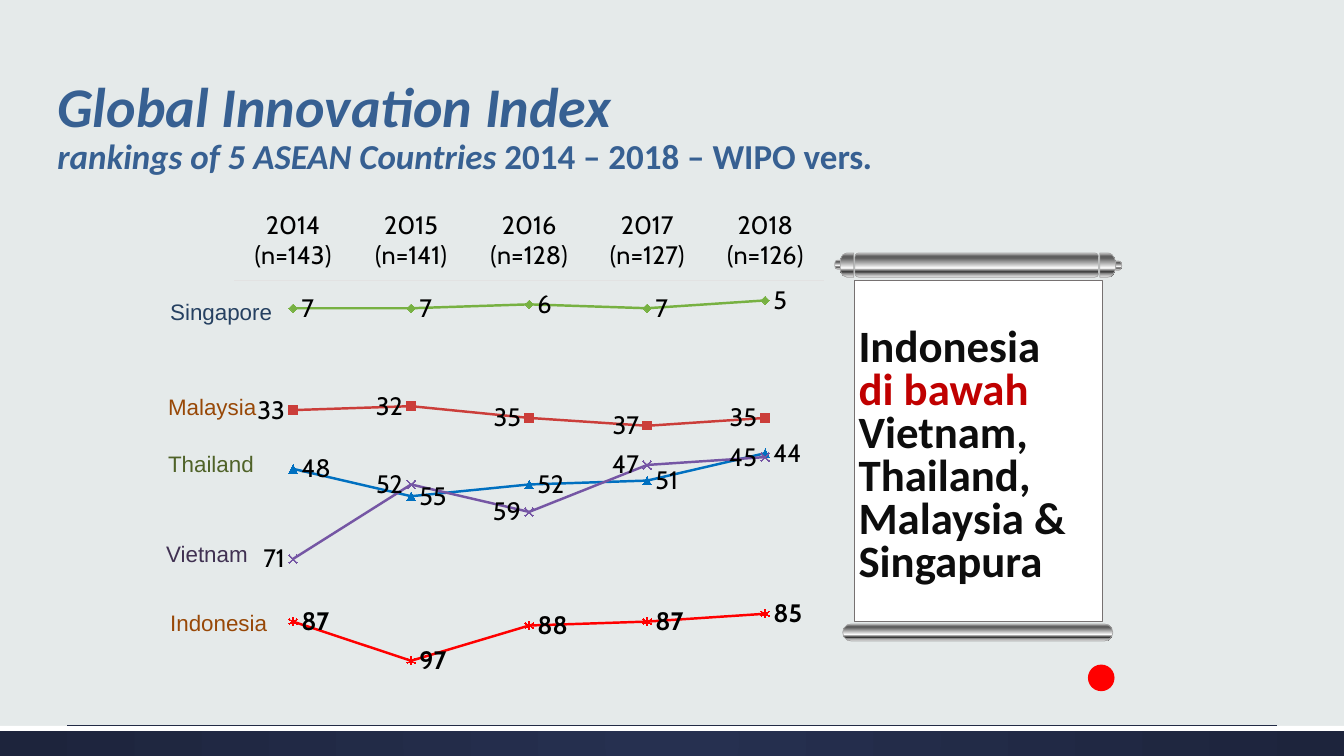
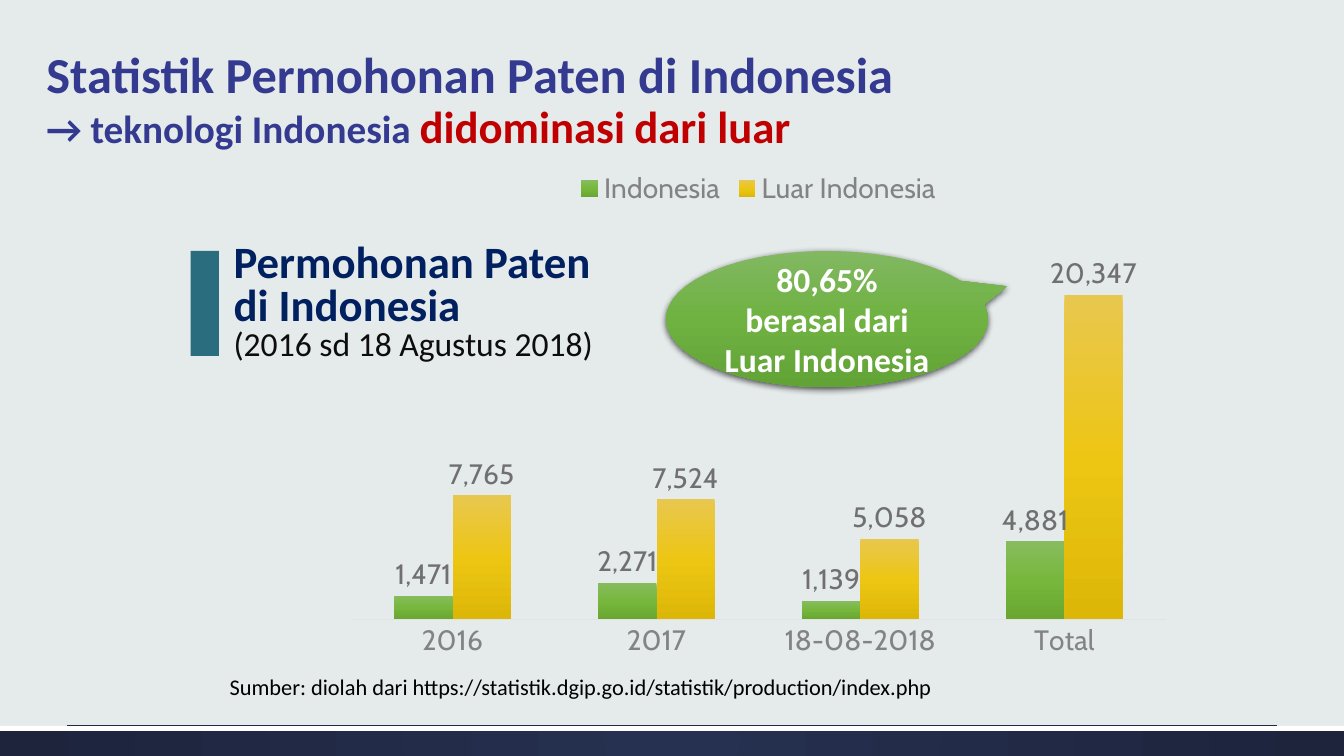
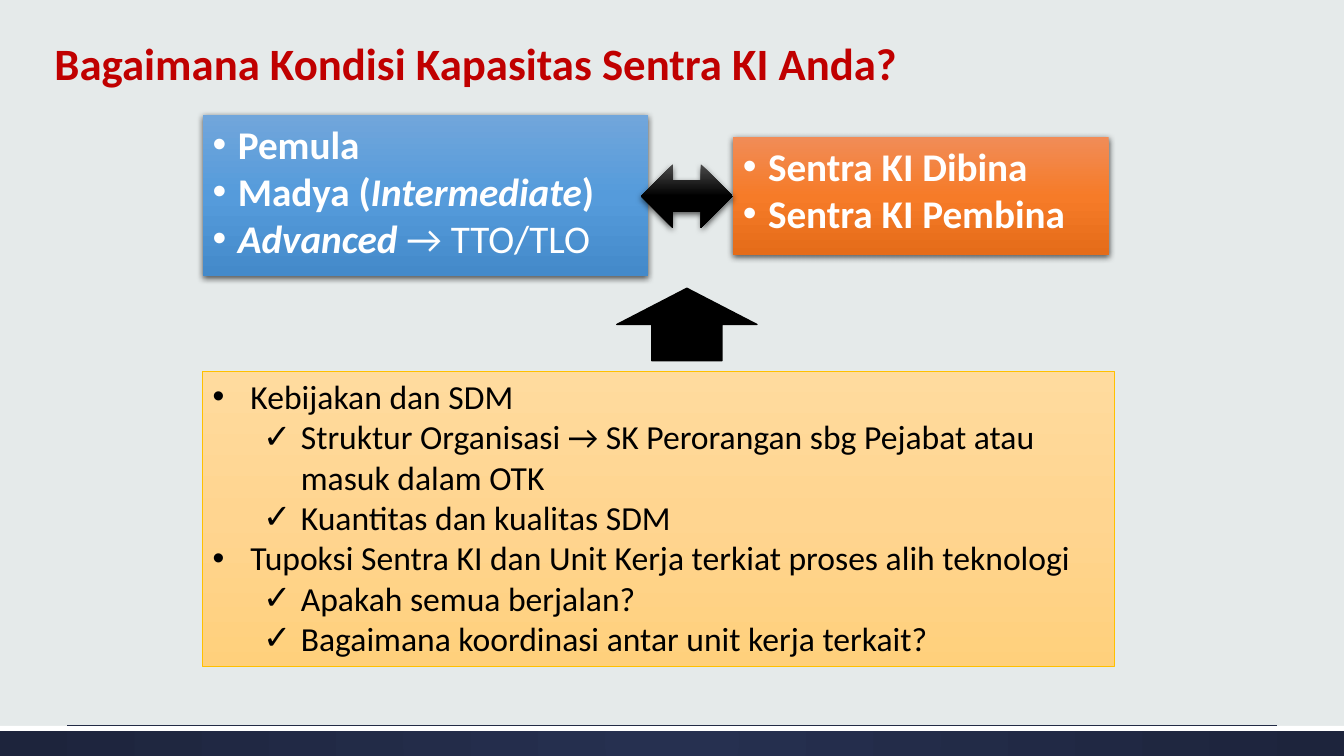
from dataclasses import dataclass
from typing import Optional, Union

from lxml.etree import SubElement
from pptx import Presentation
from pptx.chart.data import CategoryChartData
from pptx.dml.color import RGBColor
from pptx.enum.chart import XL_CHART_TYPE as CT, XL_LABEL_POSITION as LP, XL_LEGEND_POSITION
from pptx.enum.chart import XL_MARKER_STYLE as MK, XL_TICK_LABEL_POSITION, XL_TICK_MARK
from pptx.enum.shapes import MSO_CONNECTOR, MSO_SHAPE as SH
from pptx.enum.text import MSO_ANCHOR as ANCHOR, MSO_AUTO_SIZE, PP_ALIGN as ALIGN
from pptx.oxml import parse_xml
from pptx.oxml.ns import nsdecls, qn
from pptx.util import Pt

Box = tuple[float, float, float, float]
Run = tuple[str, dict]


@dataclass(frozen=True)
class Gradient:
    stops: tuple[tuple[int, str], ...]
    radial: bool = False


Fill = Union[str, Gradient]


def shade(top: str, middle: str, bottom: str) -> Gradient:
    return Gradient(((0, top), (50, middle), (100, bottom)))


@dataclass(frozen=True)
class Theme:
    text_font: str = "Calibri"
    chart_font: str = "Cabin"
    caption_font: str = "Arial"
    page: str = "E5EAEA"
    white: str = "FFFFFF"
    black: str = "000000"
    ink: str = "0D0D0D"
    red: str = "C00000"
    bright_red: str = "FF0000"
    title_blue: str = "376092"
    title_indigo: str = "333A90"
    navy: str = "002060"
    teal: str = "296D7F"
    rule: str = "222B45"
    axis: str = "E2E2E2"
    axis_text: str = "838383"
    label_text: str = "707070"
    paper_edge: str = "767171"
    metal_edge: str = "A6A6A6"
    gold_edge: str = "FFC000"
    band: Gradient = Gradient(((0, "263050"), (100, "1D243C")), radial=True)
    metal: Gradient = Gradient((
        (0, "CBCBCB"), (13, "5F5F5F"), (21, "5F5F5F"), (63, "FFFFFF"),
        (67, "B2B2B2"), (79, "292929"), (82, "777777"), (100, "EAEAEA")))
    green_bar: Gradient = shade("87BC5E", "77B73C", "69A731")
    yellow_bar: Gradient = shade("E8C74F", "EDC614", "DDB707")
    green: Gradient = shade("81B861", "6FB242", "62A336")
    blue: Gradient = shade("71A6DB", "559BDB", "448ACA")
    orange: Gradient = shade("F18C57", "F67B28", "E56C19")
    cream: Gradient = shade("FFDB9E", "FFD590", "FFD07C")
    coal: Gradient = shade("4B4B4B", "000000", "000000")
    hero: float = 40
    title: float = 36
    heading: float = 32
    lead: float = 28
    subtitle: float = 25
    body: float = 24
    chart_large: float = 20
    chart_small: float = 18
    small: float = 16


T = Theme()


@dataclass(frozen=True)
class Country:
    name: str
    ranks: tuple[int, ...]
    color: str
    marker: MK
    label_side: LP
    caption_color: str
    caption_box: Box
    hollow: bool = False
    bold: bool = False


COUNTRIES = (
    Country("Singapore", (7, 7, 6, 7, 5), "77B142", MK.DIAMOND, LP.RIGHT,
            "254061", (114.5, 209.5, 87.8, 26.6)),
    Country("Malaysia", (33, 32, 35, 37, 35), "CB3E3A", MK.SQUARE, LP.LEFT,
            "984807", (113, 277.2, 78.5, 26.6)),
    Country("Thailand", (48, 55, 52, 51, 44), "0070C0", MK.TRIANGLE, LP.RIGHT,
            "4F6228", (113, 318.2, 76.3, 26.6)),
    Country("Vietnam", (71, 52, 59, 47, 45), "7556A4", MK.X, LP.LEFT,
            "403152", (111.6, 382.3, 73.4, 26.6), hollow=True),
    Country("Indonesia", (87, 97, 88, 87, 85), "FF0000", MK.STAR, LP.RIGHT,
            "984807", (114.5, 431.3, 84.2, 26.6), hollow=True, bold=True),
)


@dataclass(frozen=True)
class RodPart:
    kind: SH
    box: Box
    flipped: bool = False


ROD_PARTS = (
    RodPart(SH.ROUNDED_RECTANGLE, (610.6, 180.7, 174.2, 17.3)),
    RodPart(SH.FLOWCHART_DELAY, (785.5, 180.7, 11.5, 17.3)),
    RodPart(SH.FLOWCHART_DELAY, (599.8, 180.7, 10.1, 17.3), True),
    RodPart(SH.FLOWCHART_DELAY, (797, 186.5, 4.3, 6.5)),
    RodPart(SH.FLOWCHART_DELAY, (596.2, 185.8, 4.3, 6.5), True),
    RodPart(SH.ROUNDED_RECTANGLE, (601.9, 445.7, 193, 12.2)),
)


@dataclass(frozen=True)
class Item:
    runs: tuple[Run, ...]
    mark: str = "•"
    level: int = 0


@dataclass(frozen=True)
class Panel:
    idx: int
    box: Box
    fill: Gradient
    items: tuple[Item, ...]
    fmt: dict
    hang: float
    line: Optional[tuple[str, float]] = None
    shadow: bool = False


BOLD = {"bold": True}
ITALIC = {"bold": True, "italic": True}
CHECK = {"mark": "✓", "level": 1}
PANEL_HEAD = {"size": T.lead, "color": T.white}
PANELS = (
    Panel(2, (144.7, 82.1, 318.2, 115.2), T.blue, (
        Item((("Pemula", BOLD),)),
        Item((("Madya (", BOLD), ("Intermediate", ITALIC), (")", BOLD))),
        Item((("Advanced ", ITALIC), ("→ TTO/TLO", {}))),
    ), PANEL_HEAD, 18, shadow=True),
    Panel(4, (523.4, 97.9, 268.6, 84.2), T.orange, (
        Item((("Sentra KI Dibina", BOLD),)),
        Item((("Sentra KI Pembina", BOLD),)),
    ), PANEL_HEAD, 18, shadow=True),
    Panel(1, (144.7, 265, 651.6, 211), T.cream, (
        Item((("Kebijakan dan SDM", {}),)),
        Item((("Struktur Organisasi → SK Perorangan sbg Pejabat atau masuk dalam OTK", {}),), **CHECK),
        Item((("Kuantitas dan kualitas SDM", {}),), **CHECK),
        Item((("Tupoksi Sentra KI dan Unit Kerja terkiat proses alih teknologi", {}),)),
        Item((("Apakah semua berjalan?", {}),), **CHECK),
        Item((("Bagaimana koordinasi antar unit kerja terkait?", {}),), **CHECK),
    ), {"size": T.body, "color": T.black}, 27, line=(T.gold_edge, 0.5)),
)


def rgb(color: str) -> RGBColor:
    return RGBColor.from_string(color)


def set_font(font, **fmt) -> None:
    values = {"name": T.text_font, "bold": False, "italic": False} | fmt
    for key, value in values.items():
        if key == "color":
            font.color.rgb = rgb(value)
        else:
            setattr(font, key, Pt(value) if key == "size" else value)


def place(sp, box: Box) -> None:
    for key, value in zip(("left", "top", "width", "height"), box):
        setattr(sp, key, Pt(value))


def paint(owner, spPr, fill: Fill) -> None:
    owner.fill.solid()
    if isinstance(fill, str):
        owner.fill.fore_color.rgb = rgb(fill)
        return
    stops = "".join(f'<a:gs pos="{pos * 1000}"><a:srgbClr val="{color}"/></a:gs>'
                    for pos, color in fill.stops)
    course = ('<a:path path="circle"><a:fillToRect l="50000" t="50000" r="50000" b="50000"/></a:path>'
              if fill.radial else '<a:lin ang="5400000" scaled="0"/>')
    solid = spPr.find(qn("a:solidFill"))
    spPr.replace(solid, parse_xml(
        f'<a:gradFill {nsdecls("a")} rotWithShape="1"><a:gsLst>{stops}</a:gsLst>{course}</a:gradFill>'))


def dress(sp, fill: Fill, line: Optional[tuple[str, float]] = None, shadow: bool = False) -> None:
    spPr = sp._element.spPr
    paint(sp, spPr, fill)
    if line:
        sp.line.color.rgb, sp.line.width = rgb(line[0]), Pt(line[1])
    else:
        sp.line.fill.background()
    sp.shadow.inherit = False
    if shadow:
        spPr.find(qn("a:effectLst")).append(parse_xml(
            f'<a:outerShdw {nsdecls("a")} blurRad="{Pt(4.5)}" dist="{Pt(1.5)}" dir="5400000" '
            f'algn="ctr" rotWithShape="0"><a:srgbClr val="{T.black}"><a:alpha val="63000"/>'
            '</a:srgbClr></a:outerShdw>'))


def add_box(s, kind: SH, box: Box, fill: Fill, line=None, shadow: bool = False):
    sp = s.shapes.add_shape(kind, *map(Pt, box))
    dress(sp, fill, line, shadow)
    return sp


def write(p, runs: tuple[Run, ...], base: dict, spacing: float = 1, align=ALIGN.LEFT) -> None:
    p.alignment, p.line_spacing, p.space_before = align, spacing, Pt(0)
    for text, fmt in runs:
        if text == "\n":
            p.add_line_break()
            continue
        r = p.add_run()
        r.text = text
        set_font(r.font, **base | fmt)


def set_frame(tf, anchor, wrap: bool = True) -> None:
    values = {"word_wrap": wrap, "auto_size": MSO_AUTO_SIZE.NONE, "vertical_anchor": anchor}
    for key, value in values.items():
        setattr(tf, key, value)


def add_text(s, box: Box, *paragraphs: tuple[Run, ...], base: dict, spacing: float = 1,
             anchor=ANCHOR.TOP, wrap: bool = True) -> None:
    tf = s.shapes.add_textbox(*map(Pt, box)).text_frame
    set_frame(tf, anchor, wrap)
    for i, runs in enumerate(paragraphs):
        write(tf.add_paragraph() if i else tf.paragraphs[0], runs, base, spacing)


def set_title(s, box: Box, color: str, *runs: Run) -> None:
    sp = s.shapes.title
    place(sp, box)
    set_frame(sp.text_frame, ANCHOR.BOTTOM)
    write(sp.text_frame.paragraphs[0], runs, {"bold": True, "color": color}, 0.9)


def fill_panel(s, panel: Panel) -> None:
    sp = next(ph for ph in s.placeholders if ph.placeholder_format.idx == panel.idx)
    place(sp, panel.box)
    dress(sp, panel.fill, panel.line, panel.shadow)
    tf = sp.text_frame
    set_frame(tf, ANCHOR.TOP)
    for i, item in enumerate(panel.items):
        p = tf.add_paragraph() if i else tf.paragraphs[0]
        p.level = item.level
        pPr = p._p.get_or_add_pPr()
        pPr.set("marL", str(Pt(panel.hang + 36 * item.level)))
        pPr.set("indent", str(-Pt(panel.hang)))
        SubElement(pPr, qn("a:buFont")).set("typeface", T.caption_font)
        SubElement(pPr, qn("a:buChar")).set("char", item.mark)
        write(p, item.runs, panel.fmt)


def add_chart(s, kind: CT, box: Box, cats: tuple[str, ...], series: dict, top: float,
              size: float, color: str, plot_box: Box):
    data = CategoryChartData(number_format="#,##0")
    data.categories = cats
    for name, values in series.items():
        data.add_series(name, values)
    chart = s.shapes.add_chart(kind, *map(Pt, box), data).chart
    chart.has_title = chart.has_legend = False
    set_font(chart.font, name=T.chart_font, size=size, color=color)
    chart.plots[0].vary_by_categories = False
    cat, val = chart.category_axis, chart.value_axis
    cat.major_tick_mark = XL_TICK_MARK.NONE
    cat.has_major_gridlines = val.has_major_gridlines = False
    cat.format.line.color.rgb, cat.format.line.width = rgb(T.axis), Pt(0.75)
    set_font(cat.tick_labels.font, name=T.chart_font, size=size, color=color)
    val.visible, val.minimum_scale, val.maximum_scale = False, 0, top
    area = chart._chartSpace.chart.plotArea
    for old in area.findall(qn("c:layout")):
        area.remove(old)
    spots = "".join(f'<c:{key} val="{value}"/>' for key, value in zip("xywh", plot_box))
    area.insert(0, parse_xml(
        f'<c:layout {nsdecls("c")}><c:manualLayout><c:layoutTarget val="inner"/>'
        f'<c:xMode val="edge"/><c:yMode val="edge"/>{spots}</c:manualLayout></c:layout>'))
    return chart


def label_values(ser, side: LP, **fmt) -> None:
    labels = ser.data_labels
    values = {"show_value": True, "position": side, "number_format": "#,##0",
              "number_format_is_linked": False}
    for key, value in values.items():
        setattr(labels, key, value)
    set_font(labels.font, name=T.chart_font, **fmt)


def build_master(prs, s) -> None:
    master = prs.slide_master
    master.background.fill.solid()
    master.background.fill.fore_color.rgb = rgb(T.page)
    band = add_box(s, SH.RECTANGLE, (0, 518.4, 960, 21.6), T.band)
    strip = add_box(s, SH.RECTANGLE, (0, 518.4, 960, 3.6), T.white)
    rule = s.shapes.add_connector(MSO_CONNECTOR.STRAIGHT, Pt(48), Pt(518), Pt(912), Pt(518))
    rule.line.color.rgb, rule.line.width = rgb(T.rule), Pt(0.75)
    SubElement(rule._element.spPr, qn("a:effectLst"))
    for number, sp in enumerate((band, strip, rule), 100):
        next(sp._element.iter(qn("p:cNvPr"))).set("id", str(number))
        master.shapes.element.append(sp._element)


def innovation_slide(s) -> None:
    set_title(s, (33.8, 33.1, 748.8, 97.2), T.title_blue,
              ("Global Innovation Index", {"size": T.hero, "italic": True}), ("\n", {}),
              ("rankings of 5 ASEAN Countries ", {"size": T.subtitle, "italic": True}),
              ("2014 – 2018 – WIPO vers", {"size": T.subtitle}),
              (".", {"size": T.subtitle, "italic": True}))
    cats = ("2014 (n=143)", "2015 (n=141)", "2016 (n=128)", "2017 (n=127)", "2018 (n=126)")
    chart = add_chart(s, CT.LINE_MARKERS, (158.4, 142.6, 439.2, 397.4), cats,
                      {c.name: c.ranks for c in COUNTRIES}, 120, T.chart_small, T.black,
                      (0.02, 0.146, 0.96, 0.845))
    chart.value_axis.reverse_order = True
    chart.category_axis.tick_label_position = XL_TICK_LABEL_POSITION.LOW
    for c, ser in zip(COUNTRIES, chart.plots[0].series):
        ser.smooth = False
        marker = ser.marker
        marker.style, marker.size = c.marker, 6
        for line in (ser.format.line, marker.format.line):
            line.color.rgb = rgb(c.color)
        ser.format.line.width = Pt(1.75)
        if c.hollow:
            marker.format.fill.background()
        else:
            marker.format.fill.solid()
            marker.format.fill.fore_color.rgb = rgb(c.color)
        label_values(ser, c.label_side, size=T.chart_small, color=T.black, bold=c.bold)
        add_text(s, c.caption_box, ((c.name, {}),), wrap=False,
                 base={"name": T.caption_font, "size": T.small, "color": c.caption_color})
    add_box(s, SH.RECTANGLE, (610.6, 200.2, 177.1, 243.4), T.white, (T.paper_edge, 0.5))
    for part in ROD_PARTS:
        sp = add_box(s, part.kind, part.box, T.metal, (T.metal_edge, 0.5))
        if part.flipped:
            sp._element.spPr.xfrm.set("flipH", "1")
    sp.adjustments[0] = 0.5
    add_text(s, (606.2, 221.8, 193, 208.8),
             (("Indonesia", {}), ("\n", {}), ("di bawah ", {"color": T.red}),
              ("Vietnam, Thailand, Malaysia & Singapura", {})),
             base={"size": T.heading, "bold": True, "color": T.ink},
             spacing=0.8, anchor=ANCHOR.MIDDLE)
    add_box(s, SH.OVAL, (777.6, 475.2, 18, 18), T.bright_red, (T.bright_red, 1))


def patent_slide(s) -> None:
    accent = {"size": T.heading, "color": T.red}
    set_title(s, (25.9, 15.8, 748.8, 97.2), T.title_indigo,
              ("Statistik Permohonan Paten di Indonesia", {"size": T.title}), ("\n", {}),
              ("→ teknologi Indonesia ", {"size": T.lead}), ("didominasi", accent),
              (" ", {"size": T.lead}), ("dari luar", accent))
    add_text(s, (159.8, 179.3, 290.9, 74.9),
             (("Permohonan Paten di Indonesia", {"size": T.heading, "color": T.navy, "bold": True}),),
             (("(2016 sd 18 Agustus 2018)", {}),),
             base={"size": T.body, "color": T.ink}, spacing=0.8, anchor=ANCHOR.MIDDLE)
    add_text(s, (157, 477.4, 549.4, 26.6),
             (("Sumber: diolah dari https://statistik.dgip.go.id/statistik/production/index.php", {}),),
             base={"size": T.small, "color": T.black})
    add_box(s, SH.RECTANGLE, (136.1, 179.3, 20.2, 74.9), T.teal)
    filings = {"Indonesia": (1471, 2271, 1139, 4881), "Luar Indonesia": (7765, 7524, 5058, 20347)}
    chart = add_chart(s, CT.COLUMN_CLUSTERED, (238.3, 113, 607, 364.3),
                      ("2016", "2017", "18-08-2018", "Total"), filings, 25000,
                      T.chart_large, T.axis_text, (0.02, 0.123, 0.96, 0.781))
    chart.plots[0].gap_width = 150
    chart.has_legend = True
    chart.legend.position = XL_LEGEND_POSITION.TOP
    chart.legend.include_in_layout = False
    set_font(chart.legend.font, name=T.chart_font, size=T.chart_large, color=T.axis_text)
    for ser, fill in zip(chart.plots[0].series, (T.green_bar, T.yellow_bar)):
        paint(ser.format, ser._element.get_or_add_spPr(), fill)
        label_values(ser, LP.OUTSIDE_END, size=T.chart_large, color=T.label_text)
    sp = add_box(s, SH.OVAL_CALLOUT, (475.9, 179.3, 229.7, 97.2), T.green, shadow=True)
    sp.adjustments[0], sp.adjustments[1] = 0.56, -0.24
    set_frame(sp.text_frame, ANCHOR.MIDDLE)
    write(sp.text_frame.paragraphs[0], (("80,65% berasal dari Luar Indonesia", {}),),
          {"size": T.body, "bold": True, "color": T.white}, align=ALIGN.CENTER)


def capacity_slide(s) -> None:
    set_title(s, (31.7, 18.7, 752.4, 49.7), T.red,
              ("Bagaimana Kondisi Kapasitas Sentra KI Anda?", {"size": T.heading}))
    for panel in PANELS:
        fill_panel(s, panel)
    add_box(s, SH.LEFT_RIGHT_ARROW, (457.9, 117.4, 65.5, 45.4), T.coal, shadow=True)
    add_box(s, SH.UP_ARROW, (440.6, 205.9, 100.1, 51.8), T.black, (T.black, 1))
    for ph in list(s.placeholders):
        if ph.has_text_frame and not ph.text_frame.text:
            ph._element.getparent().remove(ph._element)


def main() -> None:
    prs = Presentation()
    prs.slide_width, prs.slide_height = Pt(960), Pt(540)
    layouts = {layout.name: layout for layout in prs.slide_layouts}
    plan = (("Title Only", innovation_slide), ("Title Only", patent_slide),
            ("Comparison", capacity_slide))
    for i, (name, build) in enumerate(plan):
        s = prs.slides.add_slide(layouts[name])
        if i == 0:
            build_master(prs, s)
        build(s)
    prs.save("out.pptx")


if __name__ == "__main__":
    main()
